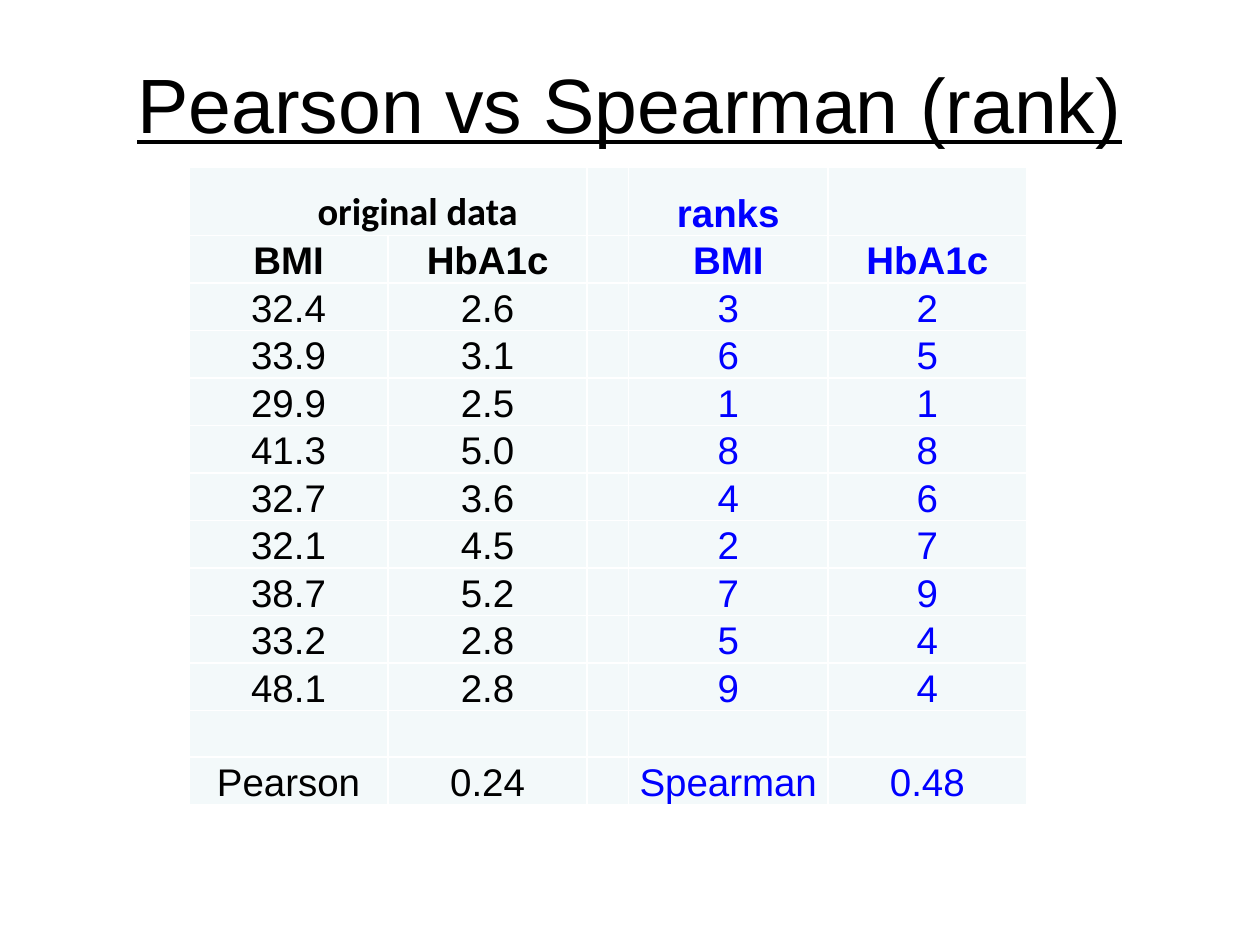
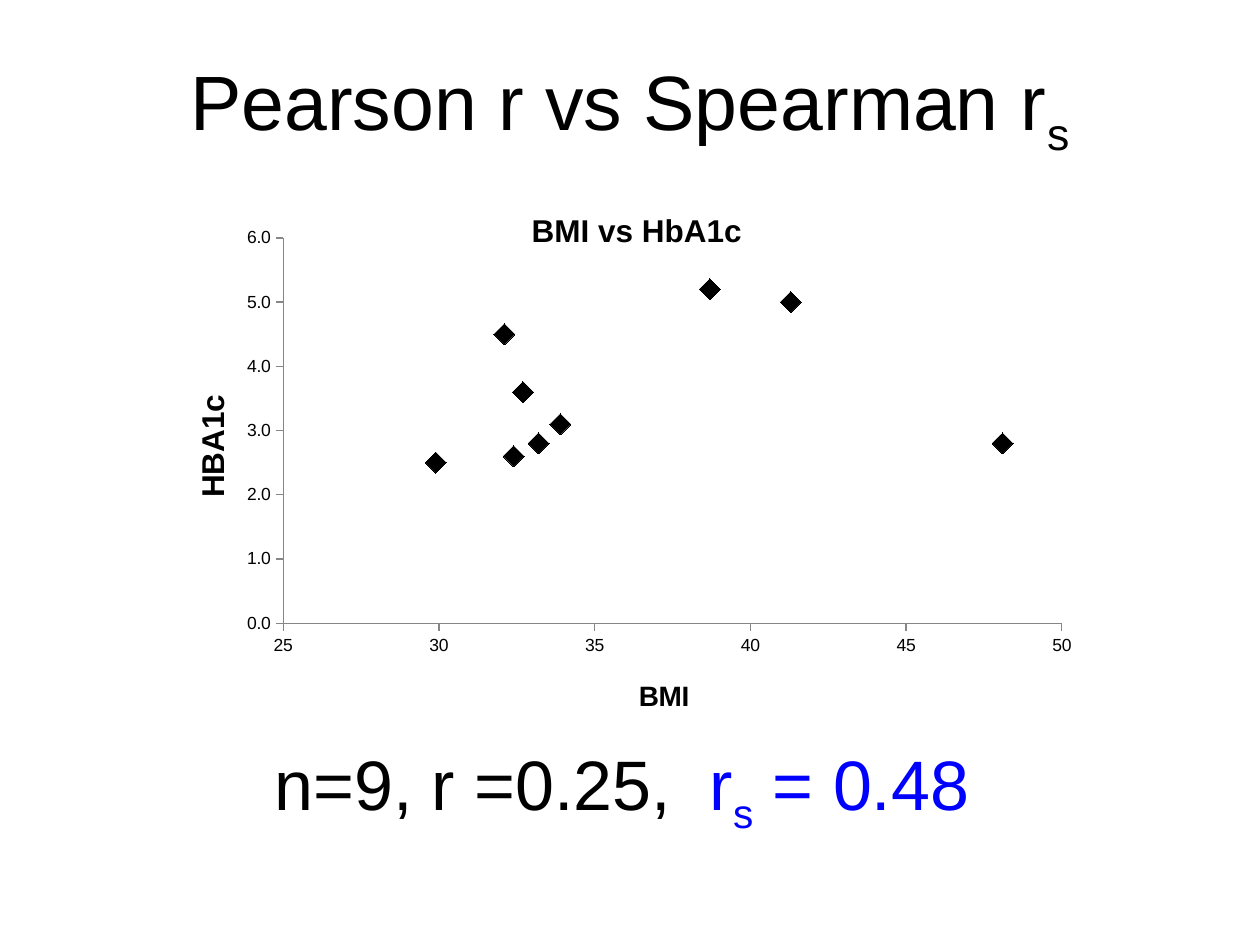
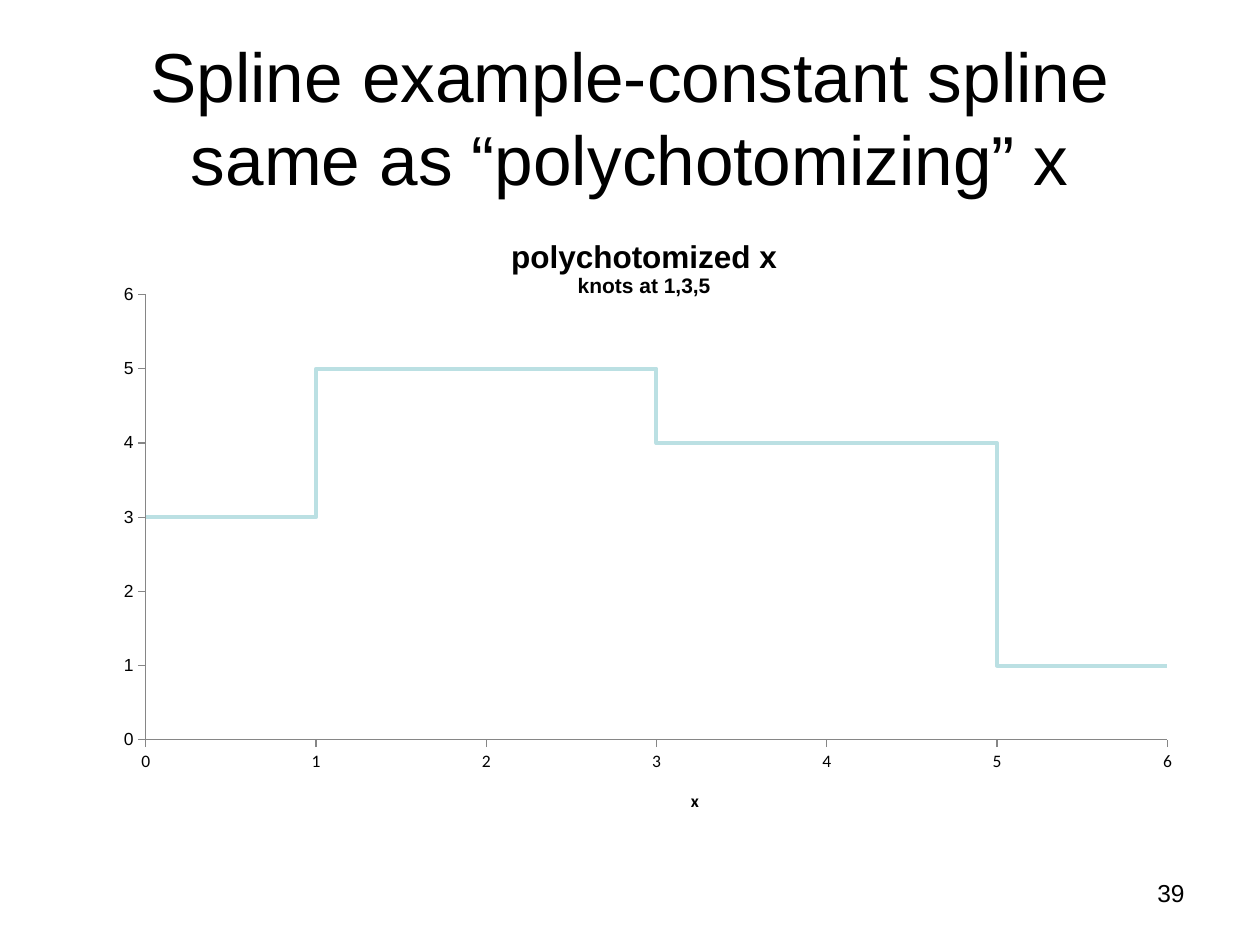
import lxml.etree
import pptx
import pptx.chart.data
import pptx.dml.color
import pptx.enum.chart
import pptx.enum.text
import pptx.oxml
import pptx.oxml.ns
import pptx.util

Inches, Pt, qn = pptx.util.Inches, pptx.util.Pt, pptx.oxml.ns.qn
ALIGN, ANCHOR = pptx.enum.text.PP_ALIGN, pptx.enum.text.MSO_ANCHOR
XL = pptx.enum.chart.XL_CHART_TYPE

FONT, ALT_FONT = "Arial", "Calibri"
BLACK, BLUE, WHITE, GRAY = "000000", "0000FF", "FFFFFF", "868686"
CELL_FILL, STEP_LINE = "F3F9FA", "BBE0E3"

BMI = [32.4, 33.9, 29.9, 41.3, 32.7, 32.1, 38.7, 33.2, 48.1]
HBA1C = [2.6, 3.1, 2.5, 5.0, 3.6, 4.5, 5.2, 2.8, 2.8]
BMI_RANKS = [3, 6, 1, 8, 4, 2, 7, 5, 9]
HBA1C_RANKS = [2, 5, 1, 8, 6, 7, 9, 4, 4]
TABLE_ROWS = [
    ("original data", "", "", "ranks", ""),
    ("BMI", "HbA1c", "", "BMI", "HbA1c"),
    *((str(b), str(h), "", str(rb), str(rh))
      for b, h, rb, rh in zip(BMI, HBA1C, BMI_RANKS, HBA1C_RANKS)),
    ("",) * 5,
    ("Pearson", "0.24", "", "Spearman", "0.48"),
]
COLUMN_WIDTHS = [1.58, 1.58, 0.33, 1.58, 1.58]
HEADER_HEIGHT, ROW_HEIGHT = 0.54, 0.37

# Title places are fractions of the chart; plot areas are x, y, width, height.
SCATTER = dict(
    kind=XL.XY_SCATTER, box=(1.25, 1.42, 7.5, 4.42),
    points=list(zip(BMI, HBA1C)), plot=(0.133, 0.106, 0.824, 0.692),
    title=[("BMI vs HbA1c", 18)], title_at=(0.39, 0.045),
    x_axis=dict(low=25, high=50, step=5, fmt="0", title="BMI", size=16, at=(0.504, 0.888)),
    y_axis=dict(low=0, high=6, step=1, fmt="0.0", title="HBA1c", size=18, at=(0.03, 0.377)),
)
STEPS = dict(
    kind=XL.XY_SCATTER_LINES_NO_MARKERS, box=(0.58, 1.67, 9, 4.95),
    points=[(0, 3), (1, 3), (1, 5), (2, 5), (3, 5), (3, 4), (4, 4), (5, 4), (5, 1), (6, 1)],
    plot=(0.064, 0.135, 0.901, 0.714),
    title=[("polychotomized x", 18), ("knots at 1,3,5", 12)], title_at=(0.383, 0.037),
    x_axis=dict(low=0, high=6, step=1, fmt="0", title="x", size=10, at=(0.542, 0.923),
                font=ALT_FONT),
    y_axis=dict(low=0, high=6, step=1, fmt="0"),
)


def rgb(color):
    return pptx.dml.color.RGBColor.from_string(color)


def set_font(font, size, color=BLACK, name=FONT, bold=False):
    font.size, font.name, font.bold = Pt(size), name, bold
    font.color.rgb = rgb(color)


def add_run(p, text, size, color=BLACK, name=FONT, bold=False, subscript=False):
    r = p.add_run()
    r.text = text
    set_font(r.font, size, color, name, bold)
    if subscript:
        r.font._element.set("baseline", "-25000")
    return r


def add_text(s, box, align, anchor=ANCHOR.TOP):
    """Add an empty text box and return its first paragraph."""
    tf = s.shapes.add_textbox(*map(Inches, box)).text_frame
    tf.word_wrap, tf.vertical_anchor = True, anchor
    p = tf.paragraphs[0]
    p.alignment = align
    return p


def add_title(s, top=0.3, height=1.03):
    return add_text(s, (0.5, top, 9, height), ALIGN.CENTER, ANCHOR.MIDDLE)


def set_borders(cell, color, width):
    tc_pr = cell._tc.get_or_add_tcPr()
    for i, side in enumerate("LRTB"):
        ln = lxml.etree.Element(qn(f"a:ln{side}"), w=str(Pt(width)))
        fill = lxml.etree.SubElement(ln, qn("a:solidFill"))
        lxml.etree.SubElement(fill, qn("a:srgbClr"), val=color)
        tc_pr.insert(i, ln)


def add_rank_table(s):
    heights = [HEADER_HEIGHT] + [ROW_HEIGHT] * (len(TABLE_ROWS) - 1)
    table = s.shapes.add_table(
        len(heights), len(COLUMN_WIDTHS), Inches(1.5), Inches(1.33),
        Inches(sum(COLUMN_WIDTHS)), Inches(sum(heights))).table
    table.first_row = table.horz_banding = False
    for column, width in zip(table.columns, COLUMN_WIDTHS):
        column.width = Inches(width)
    for row, height in zip(table.rows, heights):
        row.height = Inches(height)
    for i, texts in enumerate(TABLE_ROWS):
        for j, text in enumerate(texts):
            cell = table.cell(i, j)
            cell.margin_left = cell.margin_right = cell.margin_top = Inches(0.01)
            cell.margin_bottom = 0
            cell.vertical_anchor = ANCHOR.BOTTOM
            cell.fill.solid()
            cell.fill.fore_color.rgb = rgb(CELL_FILL)
            set_borders(cell, WHITE, 1)
            if text:
                p = cell.text_frame.paragraphs[0]
                p.alignment = ALIGN.CENTER
                add_run(p, text, 22, BLUE if j > 2 else BLACK,
                        ALT_FONT if (i, j) == (0, 0) else FONT, bold=i < 2)
    heading = table.cell(0, 0)
    heading.merge(table.cell(0, 1))
    heading.margin_left = Inches(0.48)


def place(element, index, values, inner=False):
    """Give a chart title or plot area a manual layout."""
    for old in element.findall(qn("c:layout")):
        element.remove(old)
    layout = lxml.etree.Element(qn("c:layout"))
    manual = lxml.etree.SubElement(layout, qn("c:manualLayout"))
    settings = [("layoutTarget", "inner")] if inner else []
    settings += [("xMode", "edge"), ("yMode", "edge"), *zip("xywh", values)]
    for tag, value in settings:
        lxml.etree.SubElement(manual, qn(f"c:{tag}"), val=str(value))
    element.insert(index, layout)


def set_title(title, lines, at, name=FONT):
    tf = title.text_frame
    for i, (text, size) in enumerate(lines):
        p = tf.add_paragraph() if i else tf.paragraphs[0]
        add_run(p, text, size, name=name, bold=True)
    place(title._element, 1, at)


def style_axis(axis, low, high, step, fmt, title=None, size=10, at=None, font=FONT):
    axis.minimum_scale, axis.maximum_scale, axis.major_unit = low, high, step
    axis.has_major_gridlines = False
    axis.major_tick_mark = pptx.enum.chart.XL_TICK_MARK.OUTSIDE
    axis.tick_labels.number_format = fmt
    axis.tick_labels.number_format_is_linked = False
    set_font(axis.tick_labels.font, 10, name=font)
    axis.format.line.color.rgb = rgb(GRAY)
    axis.format.line.width = Pt(0.75)
    axis.has_title = title is not None
    if title:
        set_title(axis.axis_title, [(title, size)], at, font)


def add_xy_chart(s, kind, box, points, plot, title, title_at, x_axis, y_axis):
    """Add an XY chart and return its series."""
    data = pptx.chart.data.XyChartData()
    series = data.add_series("Series 1")
    for x, y in points:
        series.add_data_point(x, y)
    chart = s.shapes.add_chart(kind, *map(Inches, box), data).chart
    chart.has_legend = False
    set_font(chart.font, 10)
    chart.has_title = True
    set_title(chart.chart_title, title, title_at)
    style_axis(chart.category_axis, **x_axis)
    style_axis(chart.value_axis, **y_axis)
    place(chart._chartSpace.find(".//" + qn("c:plotArea")), 0, plot, inner=True)
    chart.plots[0].vary_by_categories = False
    return chart.plots[0].series[0]


def rank_slide(s):
    add_run(add_title(s), "Pearson vs Spearman (rank)", 44).font.underline = True
    add_rank_table(s)


def scatter_slide(s):
    p = add_title(s, top=0.33)
    add_run(p, "Pearson r vs Spearman r", 44)
    add_run(p, "s", 44, subscript=True)
    series = add_xy_chart(s, **SCATTER)
    series.format.line.fill.background()
    marker = series.marker
    marker.style, marker.size = pptx.enum.chart.XL_MARKER_STYLE.DIAMOND, 12
    marker.format.fill.solid()
    marker.format.fill.fore_color.rgb = rgb(BLACK)
    marker.format.line.color.rgb = rgb(BLACK)
    p = add_text(s, (2.08, 5.83, 6.25, 0.77), ALIGN.LEFT)
    add_run(p, "n=9, r =0.25,  ", 40)
    add_run(p, "r", 40, BLUE)
    add_run(p, "s", 40, BLUE, subscript=True)
    add_run(p, " = 0.48", 40, BLUE)


def spline_slide(s):
    p = add_title(s, height=1.25)
    add_run(p, "Spline example-constant spline", 39.6)
    p.add_line_break()
    add_run(p, "same as “polychotomizing” x", 39.6)
    add_run(add_text(s, (7.17, 6.92, 2.33, 0.4), ALIGN.RIGHT), "39", 14)
    line = add_xy_chart(s, **STEPS).format.line
    line.color.rgb = rgb(STEP_LINE)
    line.width = Pt(2.25)


def main():
    prs = pptx.Presentation()
    prs.slide_width, prs.slide_height = Inches(10), Inches(7.5)
    for build in (rank_slide, scatter_slide, spline_slide):
        build(prs.slides.add_slide(prs.slide_layouts[6]))
    prs.save("out.pptx")


if __name__ == "__main__":
    main()
